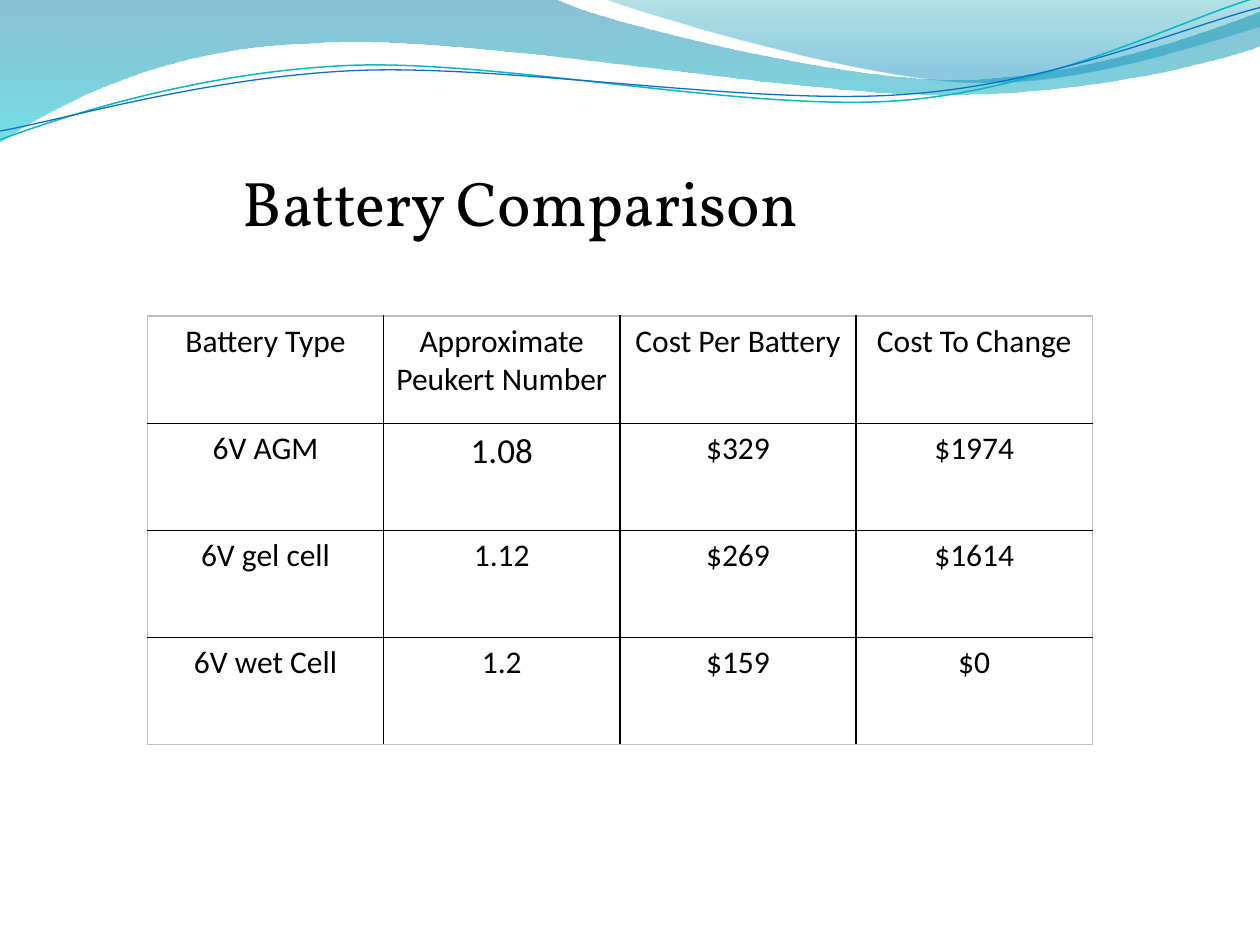
from lxml import etree
from pptx import Presentation
from pptx.dml.color import RGBColor
from pptx.enum import text
from pptx.oxml.ns import qn
from pptx.util import Inches, Pt

TITLE = "Battery Comparison"
ROWS = [
    ("Battery Type", "Approximate Peukert Number", "Cost Per Battery", "Cost To Change"),
    ("6V AGM", "1.08", "$329", "$1974"),
    ("6V gel cell", "1.12", "$269", "$1614"),
    ("6V wet Cell", "1.2", "$159", "$0"),
]
LARGE_CELLS = {"1.08": 20}
BLACK, GRAY = "000000", "BFBFBF"

# A two-number step is a straight line; a six-number step is a cubic curve.
# Gradient stops: position, colour, opacity in percent.
WAVES = [
    {"start": (0, 0),
     "steps": [(4.4, -0.01), (4.76, 0.17, 6.64, 0.63, 7.58, 0.63),
               (8.53, 0.63, 9.58, 0.26, 10, 0.09), (10.01, 0.36),
               (9.83, 0.44, 8.7, 0.76, 7.46, 0.75),
               (6.22, 0.75, 3.82, 0.28, 2.57, 0.34),
               (1.29, 0.36, 0.46, 0.83, -0.01, 1.13), (0, 0)],
     "stops": [(0, "0074A1", 45), (1, "00C6CF", 55)]},
    {"start": (4.79, -0.01),
     "steps": [(5.09, 0.11, 6.82, 0.62, 7.69, 0.65),
               (8.56, 0.69, 9.61, 0.32, 10, 0.21), (10, 0), (4.79, -0.01)],
     "stops": [(0, "00A1A9", 30), (0.8, "008BBF", 45)]},
    {"start": (0, 1.11),
     "steps": [(0.48, 0.93, 1.58, 0.57, 2.77, 0.52),
               (3.95, 0.47, 5.93, 0.89, 7.13, 0.8),
               (8.33, 0.71, 9.38, 0.15, 9.98, -0.02)],
     "line": ("0AB8BF", 0.85)},
    {"start": (0, 1.04),
     "steps": [(0.47, 0.96, 1.64, 0.61, 2.83, 0.56),
               (4.03, 0.51, 5.97, 0.84, 7.17, 0.75),
               (8.36, 0.67, 9.41, 0.21, 10, 0.06)],
     "line": ("0F6FC6", 0.75)},
]
UNITS = 100  # freeform units per inch


def color(value):
    return RGBColor.from_string(value)


def to_units(numbers):
    """Pairs of whole freeform units from a flat run of inches."""
    whole = [round(n * UNITS) for n in numbers]
    return list(zip(whole[::2], whole[1::2]))


def bend(sp, steps):
    """Join the three straight segments of each six-number step into a curve."""
    segments = iter(list(sp._element.spPr.iter(qn("a:lnTo"))))
    for step in steps:
        group = [next(segments) for _ in range(len(step) // 2)]
        if len(group) == 3:
            curve = etree.Element(qn("a:cubicBezTo"))
            group[0].addprevious(curve)
            for segment in group:
                curve.append(segment[0])
                segment.getparent().remove(segment)


def add_wave(slide, start, steps, stops=None, line=None):
    builder = slide.shapes.build_freeform(*to_units(start)[0], scale=Inches(1) / UNITS)
    points = [point for step in steps for point in to_units(step)]
    builder.add_line_segments(points, close=bool(stops))
    sp = builder.convert_to_shape()
    bend(sp, steps)
    sp.shadow.inherit = False
    if line:
        sp.fill.background()
        sp.line.color.rgb = color(line[0])
        sp.line.width = Pt(line[1])
        return
    sp.line.fill.background()
    sp.fill.gradient()
    sp.fill.gradient_angle = 270  # top to bottom
    for stop, (position, value, _) in zip(sp.fill.gradient_stops, stops):
        stop.position = position
        stop.color.rgb = color(value)
    for clr, (_, _, opacity) in zip(sp._element.spPr.iter(qn("a:srgbClr")), stops):
        etree.SubElement(clr, qn("a:alpha"), val=str(opacity * 1000))


def add_run(p, words, size, font):
    r = p.add_run()
    r.text = words
    r.font.size = Pt(size)
    r.font.name = font
    r.font.color.rgb = color(BLACK)


def add_borders(cell, x, y):
    """Black inner borders, gray where the cell meets the table's edge."""
    outer = {"lnL": x == 0, "lnR": x == len(ROWS[0]) - 1,
             "lnT": y == 0, "lnB": y == len(ROWS) - 1}
    tc_pr = cell._tc.get_or_add_tcPr()
    for side, at_edge in outer.items():
        ln = etree.SubElement(tc_pr, qn("a:" + side), w=str(Pt(1)))
        fill = etree.SubElement(ln, qn("a:solidFill"))
        etree.SubElement(fill, qn("a:srgbClr"), val=GRAY if at_edge else BLACK)


def add_battery_table(slide):
    row_height = 0.85
    table = slide.shapes.add_table(
        len(ROWS), len(ROWS[0]), Inches(1.17), Inches(2.51),
        Inches(7.5), Inches(row_height * len(ROWS))).table
    table.first_row = table.horz_banding = False
    for y, row in enumerate(ROWS):
        for x, words in enumerate(row):
            cell = table.cell(y, x)
            add_borders(cell, x, y)
            cell.fill.background()
            p = cell.text_frame.paragraphs[0]
            p.alignment = text.PP_ALIGN.CENTER
            add_run(p, words, LARGE_CELLS.get(words, 18), "Calibri")


def add_title(slide):
    tf = slide.shapes.add_textbox(Inches(1.83), Inches(1.25), Inches(5.42), Inches(0.71)).text_frame
    tf.word_wrap = True
    tf.auto_size = text.MSO_AUTO_SIZE.SHAPE_TO_FIT_TEXT
    add_run(tf.paragraphs[0], TITLE, 36, "Vollkorn")


def main():
    prs = Presentation()
    prs.slide_width, prs.slide_height = Inches(10), Inches(7.5)
    slide = prs.slides.add_slide(prs.slide_layouts[6])
    for wave in WAVES:
        add_wave(slide, **wave)
    add_battery_table(slide)
    add_title(slide)
    prs.save("out.pptx")


if __name__ == "__main__":
    main()
